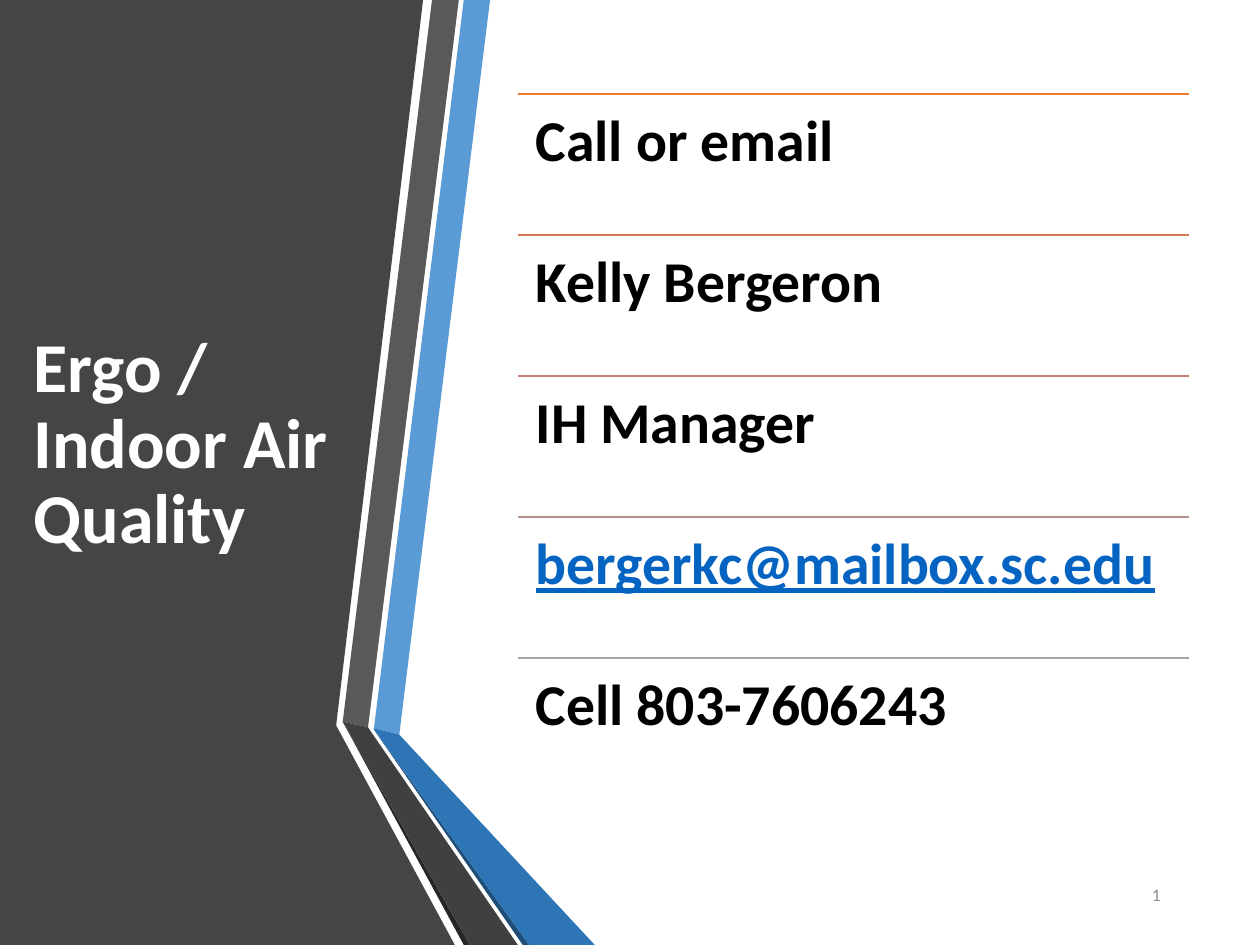
"""Build the contact slide for Ergo / Indoor Air Quality."""
from lxml import etree
from pptx import Presentation
from pptx import util as u
from pptx.dml.color import RGBColor
from pptx.enum import shapes, text
from pptx.oxml.ns import qn

COLORS = {
    "panel": "454545", "blue": "5B9BD5", "blue_dark": "2E75B6", "blue_edge": "1F4E79",
    "grey": "595959", "grey_dark": "404040", "grey_edge": "262626",
    "white": "FFFFFF", "black": "000000", "number": "8C8C8C", "link": "0563C1",
}
WIDTH, HEIGHT = 25.4, 19.05

BANDS = [
    ("panel", [(6.71, 0), (8.53, 0), (6.78, 14.6), (6.78, 14.63), (9.17, HEIGHT), (0, HEIGHT), (0, 0)]),
    ("blue", [(7.54, 14.68), (8.05, 14.81), (9.88, 0), (9.35, 0)]),
    ("grey", [(9.25, 0), (8.71, 0), (6.91, 14.55), (7.42, 14.66)]),
    ("grey_edge", [(6.91, 14.55), (9.35, HEIGHT), (9.47, HEIGHT)]),
    ("blue_edge", [(7.54, 14.71), (10.54, HEIGHT), (10.67, HEIGHT)]),
    ("blue_dark", [(7.54, 14.71), (10.67, HEIGHT), (11.99, HEIGHT), (8.05, 14.81), (7.54, 14.68)]),
    ("grey_dark", [(10.44, HEIGHT), (7.52, 14.81), (7.42, 14.66), (6.91, 14.55), (9.47, HEIGHT)]),
]

ROWS = [
    ("Call or email", "ED7D31", {}),
    ("Kelly Bergeron", "D87A51", {}),
    ("IH Manager", "C48170", {}),
    ("bergerkc@mailbox.sc.edu", "B4908B", {"color": "link", "underline": True}),
    ("Cell 803-7606243", "A5A5A5", {}),
]
ROW_LEFT, ROW_TOP, ROW_WIDTH, ROW_PITCH = 10.44, 1.9, 13.53, 2.84


def rgb(name):
    """Return the colour for a palette name or a hex string."""
    return RGBColor.from_string(COLORS.get(name, name))


def write(tf, content, size=33, color="black", bold=True, underline=None,
          align=None, spacing=0.9, after=0):
    """Write one formatted paragraph into a text frame."""
    p = tf.paragraphs[0]
    p.alignment = align
    p.line_spacing = spacing
    p.space_after = u.Pt(after)
    r = p.add_run()
    r.text = content
    r.font.name = "Calibri"
    r.font.size = u.Pt(size)
    r.font.bold = bold
    r.font.underline = underline
    r.font.color.rgb = rgb(color)


class Deck:
    """Hold the style and the current slide."""

    def __init__(self):
        """Start a presentation with one blank slide."""
        self.prs = Presentation()
        self.prs.slide_width, self.prs.slide_height = u.Cm(WIDTH), u.Cm(HEIGHT)
        self.s = self.prs.slides.add_slide(self.prs.slide_layouts[6])

    def band(self, color, points):
        """Draw a filled polygon."""
        (x, y), *rest = [(u.Cm(a), u.Cm(b)) for a, b in points]
        builder = self.s.shapes.build_freeform(x, y)
        builder.add_line_segments(rest, close=True)
        sp = builder.convert_to_shape()
        sp.shadow.inherit = False
        sp.fill.solid()
        sp.fill.fore_color.rgb = rgb(color)
        sp.line.fill.background()

    def rule(self, x, y, width, color):
        """Draw a thin horizontal line."""
        sp = self.s.shapes.add_connector(
            shapes.MSO_CONNECTOR.STRAIGHT, u.Cm(x), u.Cm(y), u.Cm(x + width), u.Cm(y))
        sp.line.color.rgb = rgb(color)
        sp.line.width = u.Pt(1)
        etree.SubElement(sp.line._get_or_add_ln().getparent(), qn("a:effectLst"))

    def label(self, x, y, width, height, content, inset=None,
              anchor=text.MSO_ANCHOR.MIDDLE, **style):
        """Add a wrapped text box."""
        tf = self.s.shapes.add_textbox(u.Cm(x), u.Cm(y), u.Cm(width), u.Cm(height)).text_frame
        tf.word_wrap = True
        tf.vertical_anchor = anchor
        if inset is not None:
            tf.margin_left = tf.margin_right = tf.margin_top = tf.margin_bottom = u.Cm(inset)
        write(tf, content, **style)


def main():
    """Build and save the slide."""
    deck = Deck()
    for color, points in BANDS:
        deck.band(color, points)
    deck.label(0.43, 1.9, 6.48, 14.17, "Ergo / Indoor Air Quality", size=40, color="white")
    deck.label(21.39, 17.53, 2.26, 1.02, "1", size=10, color="number", bold=False,
               align=text.PP_ALIGN.RIGHT, spacing=1.0, after=6)
    for i, (content, color, style) in enumerate(ROWS):
        y = ROW_TOP + i * ROW_PITCH
        deck.rule(ROW_LEFT, y, ROW_WIDTH, color)
        deck.label(ROW_LEFT, y, ROW_WIDTH, ROW_PITCH, content, inset=0.36,
                   anchor=text.MSO_ANCHOR.TOP, after=12, **style)
    deck.prs.save("out.pptx")


if __name__ == "__main__":
    main()
